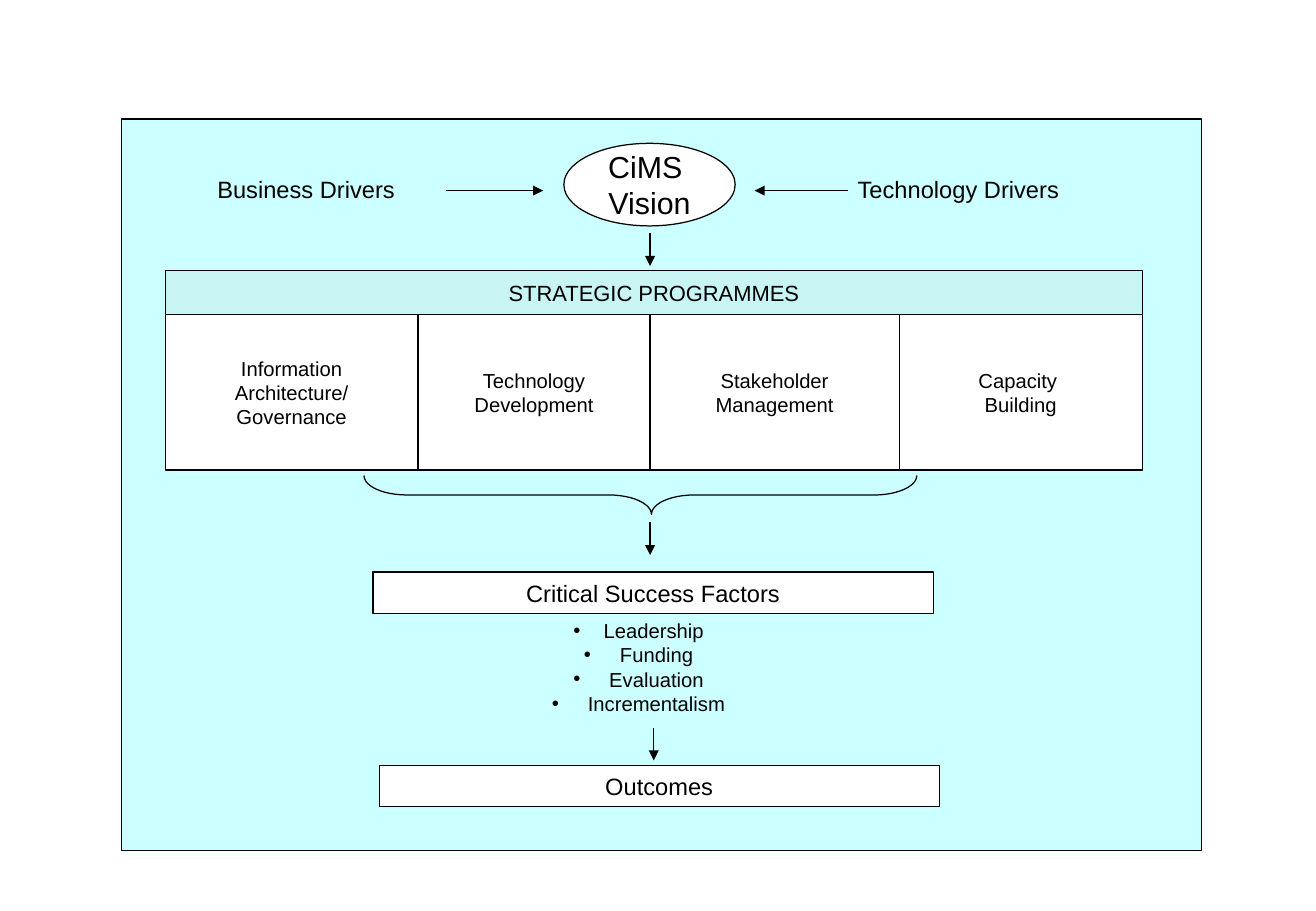
from itertools import pairwise

from lxml.etree import SubElement
from pptx import Presentation
from pptx.dml.color import RGBColor
from pptx.enum.shapes import MSO_CONNECTOR as Line, MSO_SHAPE as Preset
from pptx.enum.text import MSO_ANCHOR as Anchor, PP_ALIGN as Align
from pptx.oxml.ns import qn
from pptx.util import Emu, Inches, Pt

SLIDE_W, SLIDE_H = 10.83, 7.5
BLACK, WHITE, AQUA, GREY = "000000", "FFFFFF", "CCFFFF", "C0C0C0"


def color(hex_string):
    return RGBColor.from_string(hex_string)


def inches(*lengths):
    return [Inches(length) for length in lengths]


def write(holder, lines, size, align=Align.CENTER, wrap=False, bullet_indent=0):
    frame = holder.text_frame
    frame.word_wrap = wrap
    frame.vertical_anchor = Anchor.MIDDLE
    for number, line in enumerate(lines):
        paragraph = frame.add_paragraph() if number else frame.paragraphs[0]
        paragraph.alignment = align
        if bullet_indent:
            props = paragraph._p.get_or_add_pPr()
            props.set("marL", str(Inches(bullet_indent)))
            props.set("indent", str(-Inches(bullet_indent)))
            SubElement(props, qn("a:buFont"), typeface="Arial")
            SubElement(props, qn("a:buChar"), char="•")
        run = paragraph.add_run()
        run.text = line
        font_format = {"name": "Arial", "size": Pt(size)}
        for attribute, value in font_format.items():
            setattr(run.font, attribute, value)
        run.font.color.rgb = color(BLACK)


def add_block(slide, box, lines=(), size=12, fill=WHITE, preset=Preset.RECTANGLE):
    block = slide.shapes.add_shape(preset, *inches(*box))
    block.shadow.inherit = False
    if fill:
        block.fill.solid()
        block.fill.fore_color.rgb = color(fill)
    else:
        block.fill.background()
    block.line.color.rgb = color(BLACK)
    block.line.width = Pt(0.75)
    write(block, lines, size)
    return block


def add_label(slide, box, lines, size, **text_format):
    label = slide.shapes.add_textbox(*inches(*box))
    write(label, lines, size, **text_format)


def add_arrow(slide, start, end):
    arrow = slide.shapes.add_connector(Line.STRAIGHT, *inches(*start, *end))
    arrow.line.color.rgb = color(BLACK)
    arrow.line.width = Pt(0.75)
    SubElement(arrow.line._get_or_add_ln(), qn("a:tailEnd"), type="triangle")
    SubElement(arrow._element.spPr, qn("a:effectLst"))


def add_down_arrow(slide, x, y):
    add_arrow(slide, (x, y), (x, y + 0.27))


def add_vision(slide, box):
    """Vision ellipse with the two drivers pointing at it."""
    left, top, width, height = box
    middle = top + 0.39
    add_block(slide, (left + 2.95, top, 1.41, height), ["CiMS ", "Vision"], 18,
              preset=Preset.OVAL)
    drivers = [("Business Drivers", 0, 1.67, 1.98, 2.78),
               ("Technology Drivers", 5.27, 1.87, 5.29, 4.52)]
    for name, offset, label_width, start, end in drivers:
        add_label(slide, (left + offset, middle - 0.18, label_width, 0.34),
                  [name], 14, align=Align.LEFT)
        add_arrow(slide, (left + start, middle), (left + end, middle))
    add_down_arrow(slide, left + 3.66, top + 0.74)


def add_programmes(slide, box):
    """Heading bar over four programme columns, gathered by a brace."""
    left, top, width, height = box
    bar_height = 0.36
    programmes = [["Information", "Architecture/", "Governance"],
                  ["Technology", "Development"],
                  ["Stakeholder", "Management"],
                  ["Capacity ", "Building"]]
    edges = [left + offset for offset in (0, 2.08, 3.99, 6.04, width)]
    for (start, end), lines in zip(pairwise(edges), programmes):
        add_block(slide, (start, top + bar_height, end - start, height - bar_height),
                  lines)

    heading = add_block(slide, (left, top, width, bar_height),
                        ["STRATEGIC PROGRAMMES"], 13, fill=GREY)
    tint = heading.fill._xPr.find(qn("a:solidFill"))[0]
    SubElement(tint, qn("a:alpha"), val="17000")

    brace = add_block(slide, (left + 3.75, top - 0.43, 0.32, 4.55), fill=None,
                      preset=Preset.RIGHT_BRACE)
    brace.rotation = 90
    brace.adjustments[0], brace.adjustments[1] = 1.1, 0.48
    add_down_arrow(slide, left + 3.99, top + 2.07)


def add_results(slide, box):
    """Success factors with their list, leading to the outcomes."""
    left, top, width, height = box
    bar_width, bar_height = 4.61, 0.34
    add_block(slide, (left, top, bar_width, bar_height),
              ["Critical Success Factors"], 14)
    add_label(slide, (left - 0.14, top + 0.38, 4.65, 0.8),
              ["Leadership", " Funding", " Evaluation", " Incrementalism"], 12,
              wrap=True, bullet_indent=0.25)
    add_down_arrow(slide, left + 2.31, top + 1.28)
    add_block(slide, (left + width - bar_width, top + height - bar_height,
                      bar_width, bar_height), ["Outcomes"], 14)


def main():
    deck = Presentation()
    deck.slide_width, deck.slide_height = inches(SLIDE_W, SLIDE_H)
    slide = deck.slides.add_slide(deck.slide_layouts[6])
    add_block(slide, (1, 0.98, 8.89, 6.02), fill=AQUA)
    add_vision(slide, (1.69, 1.18, 7.14, 0.68))
    add_programmes(slide, (1.36, 2.23, 8.04, 1.64))
    add_results(slide, (3.07, 4.71, 4.66, 1.93))
    deck.save("out.pptx")


if __name__ == "__main__":
    main()
